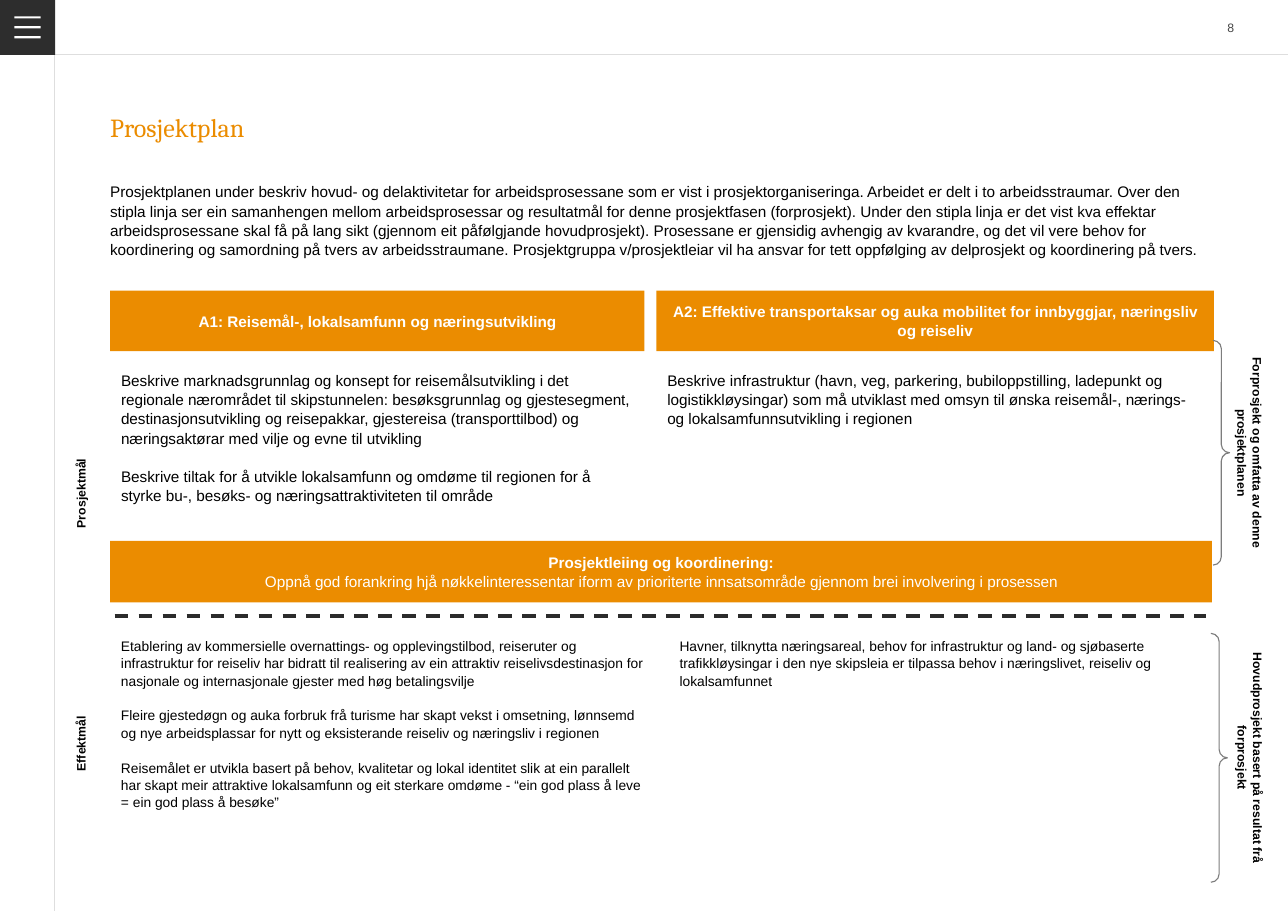
from lxml.etree import SubElement
from pptx import Presentation
from pptx.dml.color import RGBColor
from pptx.enum.dml import MSO_LINE
from pptx.enum.shapes import MSO_CONNECTOR, MSO_SHAPE
from pptx.enum.text import MSO_ANCHOR, PP_ALIGN
from pptx.oxml.ns import qn
from pptx.util import Pt

HUES = {
    "orange": "EB8C00",
    "black": "000000",
    "white": "FFFFFF",
    "dark": "2D2D2D",
    "dash": "2B2B2B",
    "rule": "DEDEDE",
    "brace": "7D7D7D",
    "page": "464646",
}
WIDE, HIGH = 841.68, 595.44
EDGE = 36
LEFT = 72
PAD = 7.2

INTRO = (
    "Prosjektplanen under beskriv hovud- og delaktivitetar for arbeidsprosessane som er vist i "
    "prosjektorganiseringa. Arbeidet er delt i to arbeidsstraumar. Over den stipla linja ser ein "
    "samanhengen mellom arbeidsprosessar og resultatmål for denne prosjektfasen (forprosjekt). "
    "Under den stipla linja er det vist kva effektar arbeidsprosessane skal få på lang sikt "
    "(gjennom eit påfølgjande hovudprosjekt). Prosessane er gjensidig avhengig av kvarandre, og "
    "det vil vere behov for koordinering og samordning på tvers av arbeidsstraumane. "
    "Prosjektgruppa v/prosjektleiar vil ha ansvar for tett oppfølging av delprosjekt og "
    "koordinering på tvers."
)
HEADS = [
    "A1: Reisemål-, lokalsamfunn og næringsutvikling",
    "A2: Effektive transportaksar og auka mobilitet for innbyggjar, næringsliv og reiseliv",
]
GOALS = [
    [
        "Beskrive marknadsgrunnlag og konsept for reisemålsutvikling i det regionale nærområdet "
        "til skipstunnelen: besøksgrunnlag og gjestesegment, destinasjonsutvikling og "
        "reisepakkar, gjestereisa (transporttilbod) og næringsaktørar med vilje og evne til "
        "utvikling",
        "Beskrive tiltak for å utvikle lokalsamfunn og omdøme til regionen for å styrke bu-, "
        "besøks- og næringsattraktiviteten til område",
    ],
    [
        "Beskrive infrastruktur (havn, veg, parkering, bubiloppstilling, ladepunkt og "
        "logistikkløysingar) som må utviklast med omsyn til ønska reisemål-, nærings- og "
        "lokalsamfunnsutvikling i regionen",
    ],
]
GAINS = [
    [
        "Etablering av kommersielle overnattings- og opplevingstilbod, reiseruter og "
        "infrastruktur for reiseliv har bidratt til realisering av ein attraktiv "
        "reiselivsdestinasjon for nasjonale og internasjonale gjester med høg betalingsvilje",
        "Fleire gjestedøgn og auka forbruk frå turisme har skapt vekst i omsetning, lønnsemd og "
        "nye arbeidsplassar for nytt og eksisterande reiseliv og næringsliv i regionen",
        "Reisemålet er utvikla basert på behov, kvalitetar og lokal identitet slik at ein "
        "parallelt har skapt meir attraktive lokalsamfunn og eit sterkare omdøme - “ein god "
        "plass å leve = ein god plass å besøke”",
    ],
    [
        "Havner, tilknytta næringsareal, behov for infrastruktur og land- og sjøbaserte "
        "trafikkløysingar i den nye skipsleia er tilpassa behov i næringslivet, reiseliv og "
        "lokalsamfunnet",
    ],
]
LEAD = [
    "Prosjektleiing og koordinering:",
    "Oppnå god forankring hjå nøkkelinteressentar iform av prioriterte innsatsområde gjennom "
    "brei involvering i prosessen",
]


def tint(name):
    return RGBColor.from_string(HUES[name])


def write(shape, lines, size=10, hue="black", font="Arial", bold=False,
          align=PP_ALIGN.LEFT, anchor=MSO_ANCHOR.TOP, pad=PAD, pitch=1.05, gap=0):
    frame = shape.text_frame
    frame.word_wrap = True
    frame.vertical_anchor = anchor
    frame.margin_left = frame.margin_right = Pt(pad)
    frame.margin_top = frame.margin_bottom = Pt(pad)
    frame.text = "\n".join(lines)
    for para in frame.paragraphs:
        para.alignment = align
        para.line_spacing = pitch
        para.space_before = Pt(0)
        para.space_after = Pt(gap)
        for run in para.runs:
            run.font.name = font
            run.font.size = Pt(size)
            run.font.bold = bold
            run.font.color.rgb = tint(hue)
    frame.paragraphs[-1].space_after = Pt(0)


def label(slide, box, lines, turn=0, **style):
    shape = slide.shapes.add_textbox(*map(Pt, box))
    shape.rotation = turn
    write(shape, lines, **style)


def plain(shape, hue):
    shape.shadow.inherit = False
    shape.fill.solid()
    shape.fill.fore_color.rgb = tint(hue)
    shape.line.fill.background()
    return shape


def block(slide, box, hue):
    return plain(slide.shapes.add_shape(MSO_SHAPE.RECTANGLE, *map(Pt, box)), hue)


def rule(slide, start, end, hue, width=0.75):
    line = slide.shapes.add_connector(MSO_CONNECTOR.STRAIGHT, *map(Pt, start + end))
    line.line.color.rgb = tint(hue)
    line.line.width = Pt(width)
    SubElement(line._element.spPr, qn("a:effectLst"))
    return line


def margin(slide, box):
    x, y, w, h = box
    rule(slide, (x, y + 35.5), (x + w, y + 35.5), "rule")
    rule(slide, (x + 35.5, y), (x + 35.5, y + h), "rule")
    block(slide, (x, y, EDGE, EDGE), "dark")
    label(slide, (x + w - 71.2, y, EDGE, EDGE), ["8"], size=8, hue="page",
          align=PP_ALIGN.RIGHT, anchor=MSO_ANCHOR.MIDDLE, pad=0, pitch=1)
    menu(slide, (x + 9.5, y + 10.7, 17, 14.4))


def menu(slide, box):
    x, y, w, h = box
    thick = 1.4
    pen = slide.shapes.build_freeform(Pt(x), Pt(y))
    for i in range(3):
        top = y + i * (h - thick) / 2
        if i:
            pen.move_to(Pt(x), Pt(top))
        pen.add_line_segments([(Pt(x), Pt(top + thick)), (Pt(x + w), Pt(top + thick)),
                               (Pt(x + w), Pt(top))])
    plain(pen.convert_to_shape(), "white")


def opening(slide, box):
    x, y, w, h = box
    label(slide, (x, y, w, 41.8), ["Prosjektplan"], size=17, hue="orange",
          font="Cambria", pad=0)
    label(slide, (x, y + 46.8, 724.3, h - 46.8), [INTRO], pad=0)


def strand(slide, box, head, goals):
    x, y, w, h = box
    bar = block(slide, (x, y, w, 39.6), "orange")
    write(bar, [head], hue="white", bold=True, align=PP_ALIGN.CENTER,
          anchor=MSO_ANCHOR.MIDDLE, pitch=1)
    label(slide, (x, y + 44.6, min(w, 357.1), h - 44.6), goals, gap=12.6)


def steering(slide, box):
    x, y, w, h = box
    bar = block(slide, (x, y, w, 40.2), "orange")
    write(bar, LEAD, hue="white", align=PP_ALIGN.CENTER)
    bar.text_frame.paragraphs[0].runs[0].font.bold = True
    dash = rule(slide, (x + 2.9, y + h), (x + w - 3.6, y + h), "dash", 2.25)
    dash.line.dash_style = MSO_LINE.DASH


def aside(slide, box, turn, text, align=PP_ALIGN.CENTER):
    x, y, w, h = box
    flat = (x + (w - h) / 2, y + (h - w) / 2, h, w)
    label(slide, flat, [text], turn, size=8, bold=True, align=align)


def bracket(slide, box, text, width, length):
    x, y, w, h = box
    brace = slide.shapes.add_shape(MSO_SHAPE.RIGHT_BRACE, Pt(x), Pt(y), Pt(10.8), Pt(h))
    brace.adjustments[0] = 0.5
    brace.shadow.inherit = False
    brace.fill.background()
    brace.line.color.rgb = tint("brace")
    brace.line.width = Pt(0.75)
    aside(slide, (x + w - width, y + (h - length) / 2, width, length), 90, text)


def main():
    deck = Presentation()
    deck.slide_width, deck.slide_height = Pt(WIDE), Pt(HIGH)
    slide = deck.slides.add_slide(deck.slide_layouts[6])
    margin(slide, (0, 0, WIDE, HIGH))
    opening(slide, (LEFT, LEFT, 734.4, 117.4))
    strand(slide, (LEFT, 190, 349.2, 172.8), HEADS[0], GOALS[0])
    strand(slide, (429, 190, 364.3, 96.4), HEADS[1], GOALS[1])
    steering(slide, (LEFT, 353.5, 720, 49))
    label(slide, (LEFT, 409, 357.1, 162.7), GAINS[0], size=9, gap=11.4)
    label(slide, (437, 409, 349.2, 59.8), GAINS[1], size=9, gap=11.4)
    aside(slide, (42.5, 239, 24.5, 167), 270, "Prosjektmål")
    aside(slide, (42.5, 440.6, 24.5, 70.6), 270, "Effektmål", PP_ALIGN.LEFT)
    bracket(slide, (792.7, 222.5, 41.5, 146.9),
            "Forprosjekt og omfatta av denne prosjektplanen", 34.6, 146.9)
    bracket(slide, (791.3, 414, 43.2, 162.7),
            "Hovudprosjekt basert på resultat frå forprosjekt", 34.6, 164.2)
    deck.save("out.pptx")


if __name__ == "__main__":
    main()
